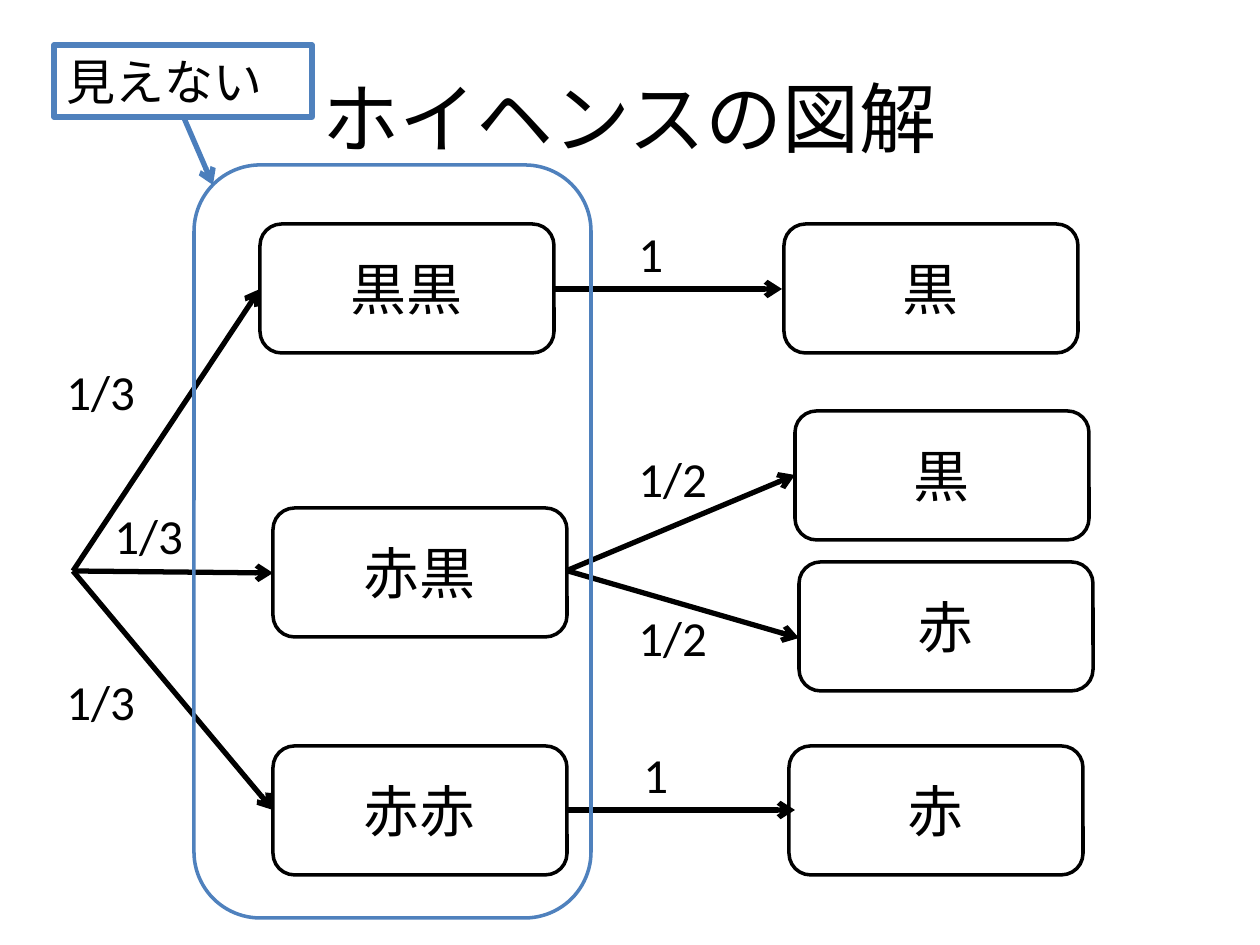
from lxml import etree
from pptx import Presentation
from pptx import util as u
from pptx.dml.color import RGBColor
from pptx.enum import shapes, text
from pptx.oxml.ns import qn

PX = 914400 / 126


class Theme:
    font = "Calibri"
    ink = RGBColor(0, 0, 0)
    paper = RGBColor(255, 255, 255)
    accent = RGBColor(0x4F, 0x81, 0xBD)
    accent_line = RGBColor(0x4B, 0x7E, 0xBC)
    title, box, label = 44, 32, 28
    thin, thick = 2, 3


TITLE = "ホイヘンスの図解"
TITLE_AREA = (63, 38, 1134, 157)
BOX_SIZE = (294, 129)
BOXES = [  # text, left, top
    ("黒黒", 260, 224), ("赤黒", 273, 508), ("赤赤", 273, 746),
    ("黒", 784, 224), ("黒", 795, 411), ("赤", 799, 562), ("赤", 789, 746),
]
ROOT = (73, 571)
ARROWS = [  # from, to
    (ROOT, (260, 289)), (ROOT, (273, 573)), (ROOT, (273, 810)),
    ((553, 289), (782, 289)), ((566, 571), (795, 475)),
    ((568, 571), (799, 638)), ((566, 810), (795, 810)),
]
LABEL_HEIGHT = 72
LABELS = [  # text, left, top, width
    ("1/3", 54, 355, 129), ("1/3", 102, 499, 129), ("1/3", 54, 665, 129),
    ("1", 626, 217, 98), ("1/2", 626, 442, 129), ("1/2", 626, 601, 129),
    ("1", 631, 738, 98),
]
HIDDEN_AREA = (194, 165, 397, 753)
CALLOUT = ("見えない", (54, 45, 258, LABEL_HEIGHT))
CALLOUT_ARROW = ((184, 118), (213, 185))


def emu(*px):
    return [u.Emu(round(v * PX)) for v in px]


def write(sp, words, size, align=text.PP_ALIGN.LEFT, anchor=text.MSO_ANCHOR.TOP):
    tf = sp.text_frame
    tf.word_wrap = True
    tf.vertical_anchor = anchor
    p = tf.paragraphs[0]
    p.alignment = align
    r = p.add_run()
    r.text = words
    r.font.name, r.font.size = Theme.font, u.Pt(size)
    r.font.color.rgb = Theme.ink


def add_outline(s, kind, area, color, width, fill=None):
    sp = s.shapes.add_shape(kind, *emu(*area))
    sp.shadow.inherit = False
    if fill is None:
        sp.fill.background()
    else:
        sp.fill.solid()
        sp.fill.fore_color.rgb = fill
    sp.line.color.rgb, sp.line.width = color, u.Pt(width)
    return sp


def add_arrow(s, start, end, color):
    c = s.shapes.add_connector(shapes.MSO_CONNECTOR.STRAIGHT, *emu(*start, *end))
    c.line.color.rgb, c.line.width = color, u.Pt(Theme.thick)
    etree.SubElement(c.line._get_or_add_ln(), qn("a:tailEnd"), type="arrow")
    etree.SubElement(c._element.spPr, qn("a:effectLst"))


def main():
    prs = Presentation()
    prs.slide_width, prs.slide_height = emu(1260, 945)
    s = prs.slides.add_slide(prs.slide_layouts[5])
    rounded = shapes.MSO_SHAPE.ROUNDED_RECTANGLE
    centred = dict(align=text.PP_ALIGN.CENTER, anchor=text.MSO_ANCHOR.MIDDLE)

    title = s.shapes.title
    title.left, title.top, title.width, title.height = emu(*TITLE_AREA)
    write(title, TITLE, Theme.title, **centred)

    for words, left, top in BOXES:
        sp = add_outline(s, rounded, (left, top, *BOX_SIZE),
                         Theme.ink, Theme.thin, Theme.paper)
        write(sp, words, Theme.box, **centred)
    for start, end in ARROWS:
        add_arrow(s, start, end, Theme.ink)
    for words, left, top, width in LABELS:
        sp = s.shapes.add_textbox(*emu(left, top, width, LABEL_HEIGHT))
        write(sp, words, Theme.label)

    add_outline(s, rounded, HIDDEN_AREA, Theme.accent, Theme.thin)
    add_arrow(s, *CALLOUT_ARROW, Theme.accent_line)
    words, area = CALLOUT
    sp = add_outline(s, shapes.MSO_SHAPE.RECTANGLE, area, Theme.accent, Theme.thick)
    write(sp, words, Theme.label)

    prs.save("out.pptx")


if __name__ == "__main__":
    main()
